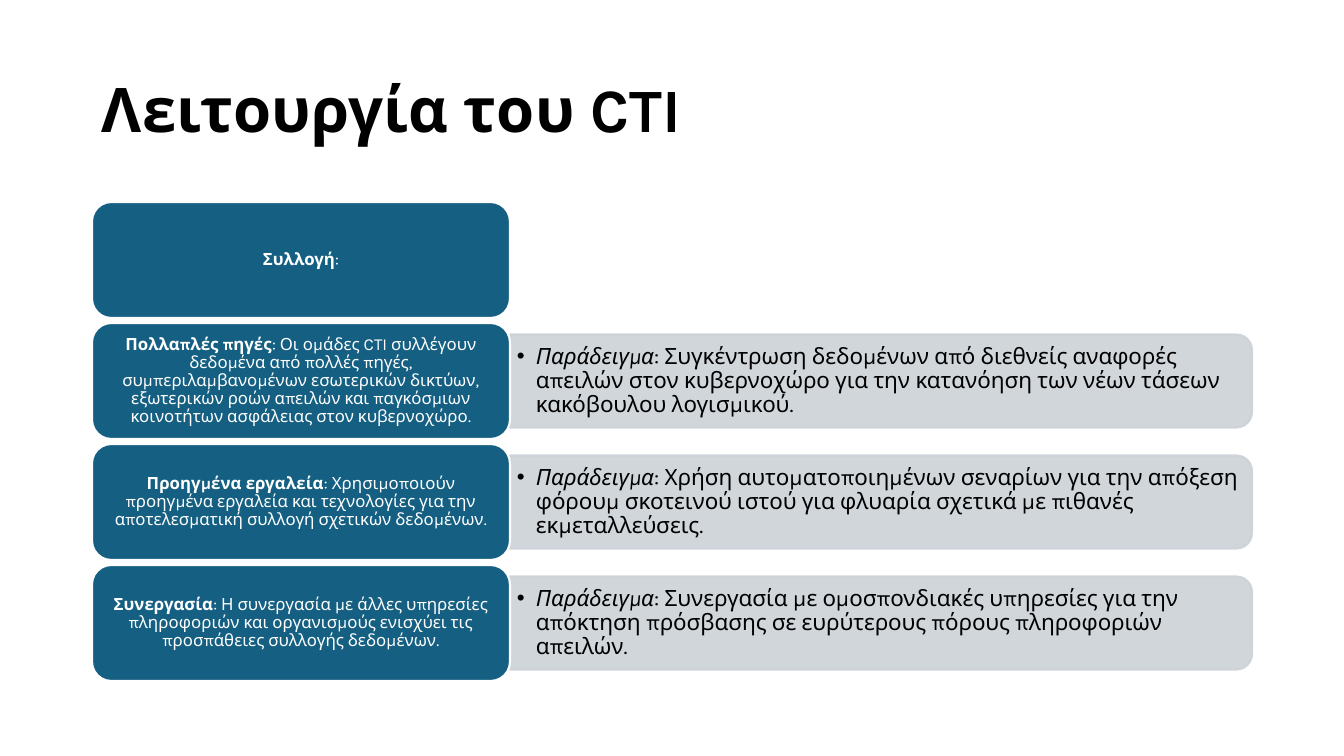
"""Build the slide on how CTI works: collection topics with their examples."""
from lxml import etree
from pptx import Presentation
from pptx.dml.color import RGBColor
from pptx.enum.shapes import MSO_SHAPE
from pptx.enum.text import MSO_ANCHOR, MSO_AUTO_SIZE, PP_ALIGN
from pptx.oxml.ns import qn
from pptx.util import Emu, Pt

ROUNDED, ROUNDED_TOP = MSO_SHAPE.ROUNDED_RECTANGLE, MSO_SHAPE.ROUND_2_SAME_RECTANGLE
MIDDLE, NO_FIT = MSO_ANCHOR.MIDDLE, MSO_AUTO_SIZE.NONE
LEFT, CENTER = PP_ALIGN.LEFT, PP_ALIGN.CENTER

BLUE = RGBColor(0x15, 0x60, 0x82)
GRAY = RGBColor(0xCC, 0xD2, 0xD8)
WHITE = RGBColor(0xFF, 0xFF, 0xFF)
BLACK = RGBColor(0x00, 0x00, 0x00)
FONT = "Karla"

SLIDE_WIDTH, SLIDE_HEIGHT = 1344, 756
SCALE = 12192000 / SLIDE_WIDTH
TOPIC_LEFT, TOPIC_TOP, TOPIC_WIDTH, TOPIC_HEIGHT = 92, 202, 418, 116
ROW_PITCH = 121
PANEL_LEFT, PANEL_WIDTH, PANEL_HEIGHT = TOPIC_LEFT + TOPIC_WIDTH, 742, 93
EXAMPLE_WIDTH, EXAMPLE_HEIGHT = 738, 84
BULLET_INDENT = 19

TITLE = "Λειτουργία του CTI"
EXAMPLE_LABEL = "Παράδειγμα"
ROWS = [
    ("Συλλογή", ":", None),
    ("Πολλαπλές πηγές",
     ": Οι ομάδες CTI συλλέγουν δεδομένα από πολλές πηγές, συμπεριλαμβανομένων εσωτερικών "
     "δικτύων, εξωτερικών ροών απειλών και παγκόσμιων κοινοτήτων ασφάλειας στον κυβερνοχώρο.",
     ": Συγκέντρωση δεδομένων από διεθνείς αναφορές απειλών στον κυβερνοχώρο για την "
     "κατανόηση των νέων τάσεων κακόβουλου λογισμικού."),
    ("Προηγμένα εργαλεία",
     ": Χρησιμοποιούν προηγμένα εργαλεία και τεχνολογίες για την αποτελεσματική συλλογή "
     "σχετικών δεδομένων.",
     ": Χρήση αυτοματοποιημένων σεναρίων για την απόξεση φόρουμ σκοτεινού ιστού για φλυαρία "
     "σχετικά με πιθανές εκμεταλλεύσεις."),
    ("Συνεργασία",
     ": Η συνεργασία με άλλες υπηρεσίες πληροφοριών και οργανισμούς ενισχύει τις προσπάθειες "
     "συλλογής δεδομένων.",
     ": Συνεργασία με ομοσπονδιακές υπηρεσίες για την απόκτηση πρόσβασης σε ευρύτερους "
     "πόρους πληροφοριών απειλών."),
]


def px(length):
    return Emu(round(length * SCALE))


def box(left, top, width, height):
    return px(left), px(top), px(width), px(height)


def set_frame(frame, horizontal, vertical):
    frame.word_wrap = True
    frame.auto_size = NO_FIT
    frame.vertical_anchor = MIDDLE
    frame.margin_left = frame.margin_right = px(horizontal)
    frame.margin_top = frame.margin_bottom = px(vertical)


def format_paragraph(paragraph, alignment, space_after):
    paragraph.alignment = alignment
    paragraph.line_spacing = 0.9
    paragraph.space_after = Pt(space_after)


def add_run(paragraph, text, size, color, bold=False, italic=False):
    run = paragraph.add_run()
    run.text = text
    run.font.name = FONT
    run.font.size = Pt(size)
    run.font.color.rgb = color
    run.font.bold = bold
    run.font.italic = italic


def add_bullet(paragraph):
    properties = paragraph._p.get_or_add_pPr()
    properties.set("marL", str(px(BULLET_INDENT)))
    properties.set("indent", str(-px(BULLET_INDENT)))
    etree.SubElement(properties, qn("a:buFont"), typeface="Arial")
    etree.SubElement(properties, qn("a:buChar"), char="•")


def add_card(slide, kind, bounds, fill, line):
    shape = slide.shapes.add_shape(kind, *box(*bounds))
    shape.shadow.inherit = False
    shape.fill.solid()
    shape.fill.fore_color.rgb = fill
    shape.line.color.rgb = line
    shape.line.width = Pt(1.5)
    return shape


def add_title(slide):
    title = slide.shapes.title
    title.left, title.top, title.width, title.height = box(92, 40, 1160, 146)
    set_frame(title.text_frame, 10, 5)
    paragraph = title.text_frame.paragraphs[0]
    format_paragraph(paragraph, LEFT, 0)
    add_run(paragraph, TITLE, 44, BLACK, bold=True)


def add_topic(slide, top, label, text):
    bounds = (TOPIC_LEFT, top, TOPIC_WIDTH, TOPIC_HEIGHT)
    topic = add_card(slide, ROUNDED, bounds, BLUE, WHITE)
    set_frame(topic.text_frame, 10, 8)
    paragraph = topic.text_frame.paragraphs[0]
    format_paragraph(paragraph, CENTER, 4)
    add_run(paragraph, label, 12, WHITE, bold=True)
    add_run(paragraph, text, 12, WHITE)


def add_example(slide, middle, text):
    bounds = (PANEL_LEFT + (PANEL_WIDTH - PANEL_HEIGHT) / 2, middle - PANEL_WIDTH / 2,
              PANEL_HEIGHT, PANEL_WIDTH)
    panel = add_card(slide, ROUNDED_TOP, bounds, GRAY, GRAY)
    panel.rotation = 90
    for color in panel._element.spPr.iter(qn("a:srgbClr")):
        etree.SubElement(color, qn("a:alpha"), val="90000")

    example = slide.shapes.add_textbox(
        *box(PANEL_LEFT, middle - EXAMPLE_HEIGHT / 2, EXAMPLE_WIDTH, EXAMPLE_HEIGHT))
    set_frame(example.text_frame, 7, 3)
    paragraph = example.text_frame.paragraphs[0]
    paragraph.level = 1
    format_paragraph(paragraph, LEFT, 2)
    add_bullet(paragraph)
    add_run(paragraph, EXAMPLE_LABEL, 16, BLACK, italic=True)
    add_run(paragraph, text, 16, BLACK)


def main():
    presentation = Presentation()
    presentation.slide_width = px(SLIDE_WIDTH)
    presentation.slide_height = px(SLIDE_HEIGHT)
    slide = presentation.slides.add_slide(presentation.slide_layouts[5])
    add_title(slide)
    for index, (label, text, example) in enumerate(ROWS):
        top = TOPIC_TOP + index * ROW_PITCH
        if example:
            add_example(slide, top + TOPIC_HEIGHT / 2, example)
        add_topic(slide, top, label, text)
    presentation.save("out.pptx")


if __name__ == "__main__":
    main()
